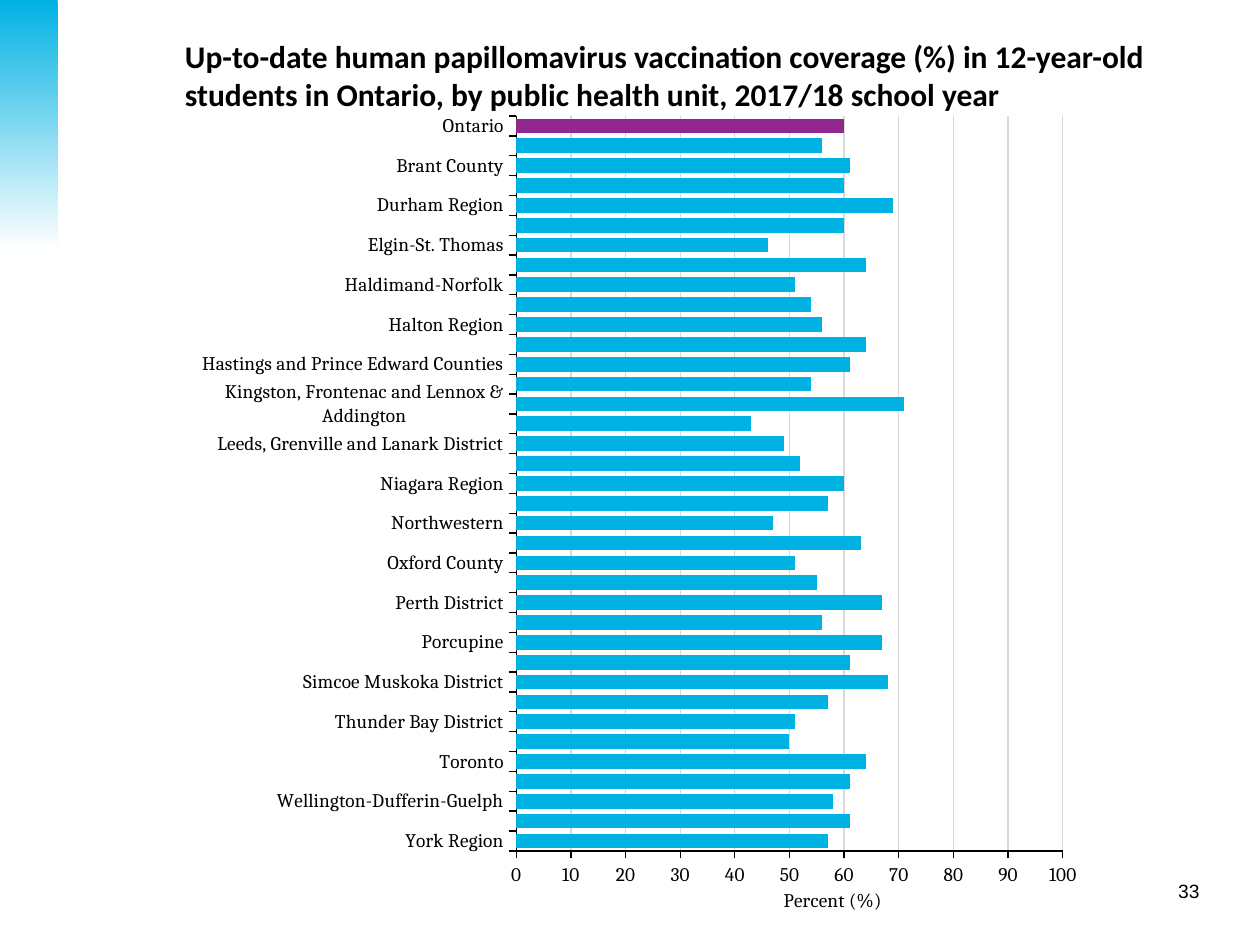
"""Build a slide charting vaccination coverage by Ontario health unit."""
from typing import NamedTuple

from lxml import etree
from pptx import Presentation
from pptx.chart.data import CategoryChartData
from pptx.dml.color import RGBColor
from pptx.enum import chart as kinds, shapes, text
from pptx.oxml import ns
from pptx.util import Pt


class Box(NamedTuple):
    left: float
    top: float
    width: float
    height: float

    def points(self) -> list:
        return [Pt(n) for n in self]


class Unit(NamedTuple):
    name: str
    rate: int


BLUE, PURPLE, BLACK, WHITE, GREY = "00B2E3", "92278F", "000000", "FFFFFF", "D9D9D9"
TITLE = ("Up-to-date human papillomavirus vaccination coverage (%) in 12-year-old "
         "students in Ontario, by public health unit, 2017/18 school year")
UNITS = [
    Unit("York Region", 57),
    Unit("Windsor-Essex County", 61),
    Unit("Wellington-Dufferin-Guelph", 58),
    Unit("Region of Waterloo", 61),
    Unit("Toronto", 64),
    Unit("Timiskaming", 50),
    Unit("Thunder Bay District", 51),
    Unit("Sudbury and District", 57),
    Unit("Simcoe Muskoka District", 68),
    Unit("Renfrew County and District", 61),
    Unit("Porcupine", 67),
    Unit("Peterborough County-City", 56),
    Unit("Perth District", 67),
    Unit("Peel", 55),
    Unit("Oxford County", 51),
    Unit("Ottawa", 63),
    Unit("Northwestern", 47),
    Unit("North Bay Parry Sound District", 57),
    Unit("Niagara Region", 60),
    Unit("Middlesex-London", 52),
    Unit("Leeds, Grenville and Lanark District", 49),
    Unit("Lambton", 43),
    Unit("Kingston, Frontenac and Lennox & Addington", 71),
    Unit("Huron County", 54),
    Unit("Hastings and Prince Edward Counties", 61),
    Unit("Hamilton", 64),
    Unit("Halton Region", 56),
    Unit("Haliburton, Kawartha, Pine Ridge District", 54),
    Unit("Haldimand-Norfolk", 51),
    Unit("Grey Bruce", 64),
    Unit("Elgin-St. Thomas", 46),
    Unit("Eastern Ontario", 60),
    Unit("Durham Region", 69),
    Unit("Chatham-Kent", 60),
    Unit("Brant County", 61),
    Unit("Algoma", 56),
    Unit("Ontario", 60),
]


def color(code: str) -> RGBColor:
    return RGBColor.from_string(code)


def style(font, face: str, size: float, bold: bool = False) -> None:
    font.name, font.size, font.bold = face, Pt(size), bold
    font.color.rgb = color(BLACK)


def rule(line, code: str) -> None:
    line.width = Pt(0.75)
    line.color.rgb = color(code)


def place(node, **parts) -> None:
    tag = ns.qn("c:layout")
    layout = node.find(tag)
    if layout is None:
        layout = etree.Element(tag)
        node.insert(0, layout)
    manual = etree.SubElement(layout, ns.qn("c:manualLayout"))
    for key, val in parts.items():
        etree.SubElement(manual, ns.qn(f"c:{key}")).set("val", str(val))


def add_band(slide, box: Box) -> None:
    band = slide.shapes.add_shape(shapes.MSO_SHAPE.RECTANGLE, *box.points())
    band.shadow.inherit = False
    band.line.fill.background()
    band.fill.gradient()
    band.fill.gradient_angle = 270
    for stop, code in zip(band.fill.gradient_stops, (BLUE, WHITE)):
        stop.color.rgb = color(code)


def add_title(slide, box: Box) -> None:
    title = slide.shapes.title
    title.left, title.top, title.width, title.height = box.points()
    frame = title.text_frame
    frame.text = TITLE
    frame.word_wrap = True
    frame.auto_size = text.MSO_AUTO_SIZE.NONE
    frame.vertical_anchor = text.MSO_ANCHOR.TOP
    para = frame.paragraphs[0]
    para.alignment = text.PP_ALIGN.LEFT
    style(para.font, "Calibri", 18, True)


def add_number(slide, box: Box) -> None:
    frame = slide.shapes.add_textbox(*box.points()).text_frame
    frame.word_wrap = True
    para = frame.paragraphs[0]
    para.text = "33"
    para.alignment = text.PP_ALIGN.RIGHT
    style(para.font, "Arial", 11)


def add_bars(slide, box: Box) -> None:
    data = CategoryChartData(number_format="0")
    data.categories = [unit.name for unit in UNITS]
    data.add_series("Series 1", [unit.rate for unit in UNITS])
    kind = kinds.XL_CHART_TYPE.BAR_CLUSTERED
    chart = slide.shapes.add_chart(kind, *box.points(), data).chart
    chart.has_legend = chart.has_title = False
    style(chart.font, "Cambria", 11)

    plot = chart.plots[0]
    plot.gap_width = 35
    plot.vary_by_categories = False
    bars = plot.series[0]
    last = bars.points[len(UNITS) - 1]
    for item, code in ((bars, BLUE), (last, PURPLE)):
        item.format.fill.solid()
        item.format.fill.fore_color.rgb = color(code)

    cats, vals = chart.category_axis, chart.value_axis
    for axis in (cats, vals):
        axis.major_tick_mark = kinds.XL_TICK_MARK.OUTSIDE
        axis.minor_tick_mark = kinds.XL_TICK_MARK.NONE
        style(axis.tick_labels.font, "Cambria", 11)
        rule(axis.format.line, BLACK)
    cats.has_major_gridlines = False
    vals.has_major_gridlines = True
    rule(vals.major_gridlines.format.line, GREY)
    vals.minimum_scale, vals.maximum_scale, vals.major_unit = 0, 100, 10
    vals.tick_labels.number_format = "0"
    vals.tick_labels.number_format_is_linked = False

    para = vals.axis_title.text_frame.paragraphs[0]
    para.text = "Percent (%)"
    style(para.font, "Cambria", 11)
    place(vals.axis_title._element, xMode="edge", yMode="edge", x=0.67, y=0.96)
    place(plot._element.getparent(), layoutTarget="inner", xMode="edge",
          yMode="edge", x=0.39, y=0.02, w=0.58, h=0.9)


def main() -> None:
    deck = Presentation()
    deck.slide_width, deck.slide_height = Pt(720), Pt(540)
    slide = deck.slides.add_slide(deck.slide_layouts[5])
    add_band(slide, Box(0, 0, 33, 142.5))
    add_title(slide, Box(98.5, 17.5, 610, 44.5))
    add_bars(slide, Box(85, 57, 538.5, 468))
    add_number(slide, Box(608.5, 499, 84, 21))
    deck.save("out.pptx")


if __name__ == "__main__":
    main()
